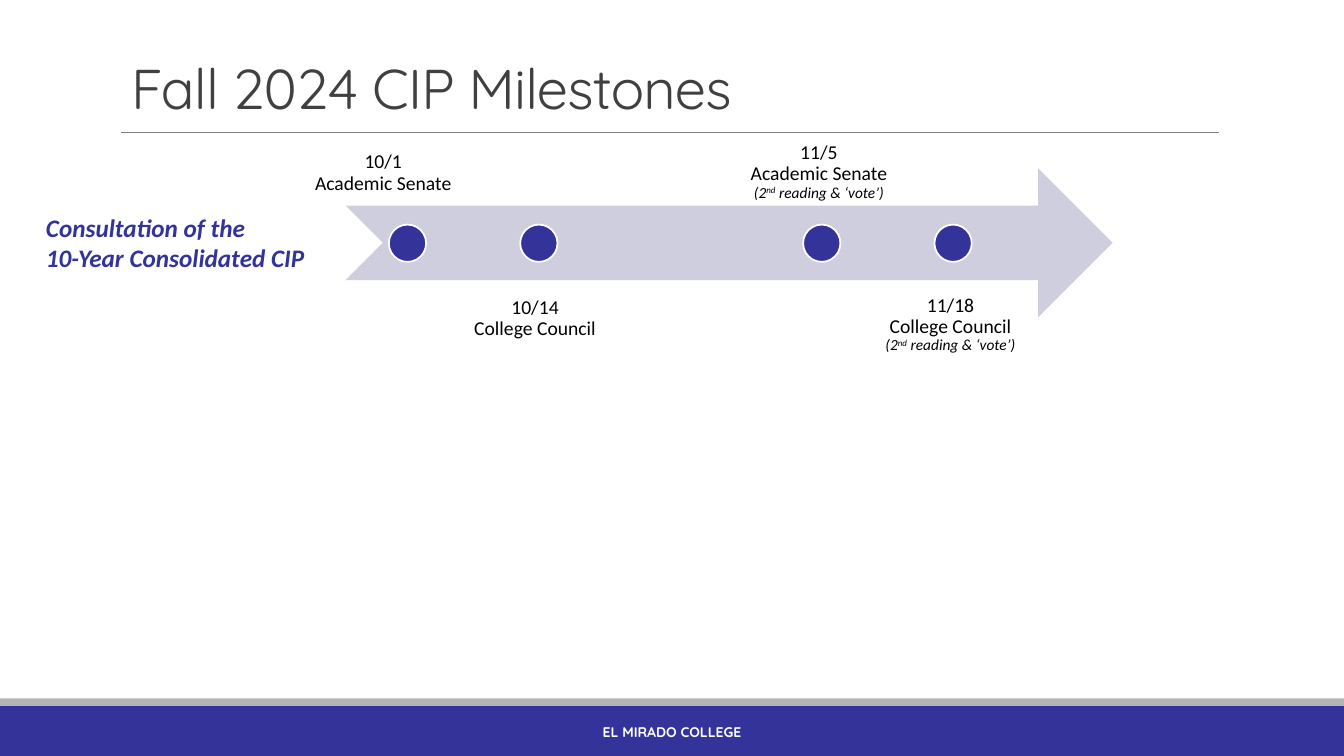
from lxml.etree import SubElement
from pptx import Presentation
from pptx.dml.color import RGBColor
from pptx.enum.shapes import MSO_CONNECTOR, MSO_SHAPE
from pptx.enum.text import MSO_ANCHOR, MSO_AUTO_SIZE, PP_ALIGN
from pptx.oxml.ns import qn
from pptx.util import Cm, Pt

COLORS = {
    "indigo": "333399", "lavender": "CECEDE", "gray": "B3B5B5", "rule": "808080",
    "title": "404040", "black": "000000", "white": "FFFFFF",
}


def add_shape(kind, left, top, width, height, fill):
    sp = s.shapes.add_shape(kind, Cm(left), Cm(top), Cm(width), Cm(height))
    sp.shadow.inherit = False
    sp.fill.solid()
    sp.fill.fore_color.rgb = RGBColor.from_string(COLORS[fill])
    sp.line.fill.background()
    return sp


def write(sp, lines, color, anchor, align=None, spacing=None, inset=None, **fmt):
    """Fill a text frame; each line is a list of (text, extra font values)."""
    tf = sp.text_frame
    tf.word_wrap = True
    tf.auto_size = MSO_AUTO_SIZE.NONE
    tf.vertical_anchor = anchor
    if inset is not None:
        for side in ("left", "top", "right", "bottom"):
            setattr(tf, f"margin_{side}", Cm(inset))
    for i, line in enumerate(lines):
        p = tf.add_paragraph() if i else tf.paragraphs[0]
        p.alignment = align
        p.line_spacing = spacing
        for text, extra in line:
            r = p.add_run()
            r.text = text
            r.font.color.rgb = RGBColor.from_string(COLORS[color])
            values = fmt | extra
            raised = values.pop("baseline", None)
            for name, value in values.items():
                setattr(r.font, name, value)
            if raised:
                r.font._element.set("baseline", raised)


prs = Presentation()
prs.slide_width, prs.slide_height = Cm(33.87), Cm(19.05)
s = prs.slides.add_slide(prs.slide_layouts[5])

# Footer bars
add_shape(MSO_SHAPE.RECTANGLE, 0, 17.78, 33.87, 1.27, "indigo")
add_shape(MSO_SHAPE.RECTANGLE, 0, 17.6, 33.87, 0.18, "gray")

# Title and its rule
title = s.shapes.title
title.left, title.top, title.width, title.height = Cm(3.05), Cm(0.79), Cm(29.03), Cm(2.39)
write(title, [[("Fall 2024 CIP Milestones", {})]], "title", MSO_ANCHOR.BOTTOM,
      PP_ALIGN.LEFT, 0.85, name="Quicksand", size=Pt(40))
title.text_frame.paragraphs[0].runs[0].font._element.set("spc", "-50")

rule = s.shapes.add_connector(MSO_CONNECTOR.STRAIGHT, Cm(3.05), Cm(3.33), Cm(30.73), Cm(3.33))
rule.line.color.rgb = RGBColor.from_string(COLORS["rule"])
rule.line.width = Pt(0.5)
SubElement(rule._element.spPr, qn("a:effectLst"))

# Footer and timeline heading
footer = s.shapes.add_textbox(Cm(10.24), Cm(17.93), Cm(13.39), Cm(1.02))
write(footer, [[("EL MIRADO COLLEGE", {})]], "white", MSO_ANCHOR.MIDDLE,
      PP_ALIGN.CENTER, name="Quicksand", size=Pt(10), bold=True)

heading = s.shapes.add_textbox(Cm(0.91), Cm(5.23), Cm(7.29), Cm(1.8))
write(heading, [[("Consultation of the", {})], [("10-Year Consolidated CIP", {})]],
      "indigo", MSO_ANCHOR.TOP, name="Calibri", size=Pt(18), bold=True, italic=True)

# Timeline arrow
add_shape(MSO_SHAPE.NOTCHED_RIGHT_ARROW, 8.71, 4.24, 19.33, 3.76, "lavender")

# Milestones: dot left, label left, top, width, inset, anchor, date, body, voting
small = {"size": Pt(11), "italic": True}
vote = [("(2", small), ("nd", small | {"baseline": "30000"}), (" reading & ‘vote’)", small)]
milestones = [
    (9.8, 7.59, 1.42, 4.14, 0.28, MSO_ANCHOR.BOTTOM, "10/1", "Academic Senate", False),
    (13.11, 11.53, 7.09, 3.91, 0.41, MSO_ANCHOR.TOP, "10/14", "College Council", False),
    (20.24, 18.39, 1.6, 4.5, 0.28, MSO_ANCHOR.BOTTOM, "11/5", "Academic Senate", True),
    (23.55, 22, 7.14, 3.91, 0.3, MSO_ANCHOR.TOP, "11/18", "College Council", True),
]
for dot_left, left, top, width, inset, anchor, date, body, voting in milestones:
    dot = add_shape(MSO_SHAPE.OVAL, dot_left, 5.66, 0.94, 0.94, "indigo")
    dot.line.color.rgb = RGBColor.from_string(COLORS["white"])
    dot.line.width = Pt(1.25)
    label = s.shapes.add_textbox(Cm(left), Cm(top), Cm(width), Cm(3.76))
    lines = [[(date, {})], [(body, {})]] + ([vote] if voting else [])
    write(label, lines, "black", anchor, PP_ALIGN.CENTER, 0.9, inset,
          name="Calibri", size=Pt(14))

prs.save("out.pptx")
